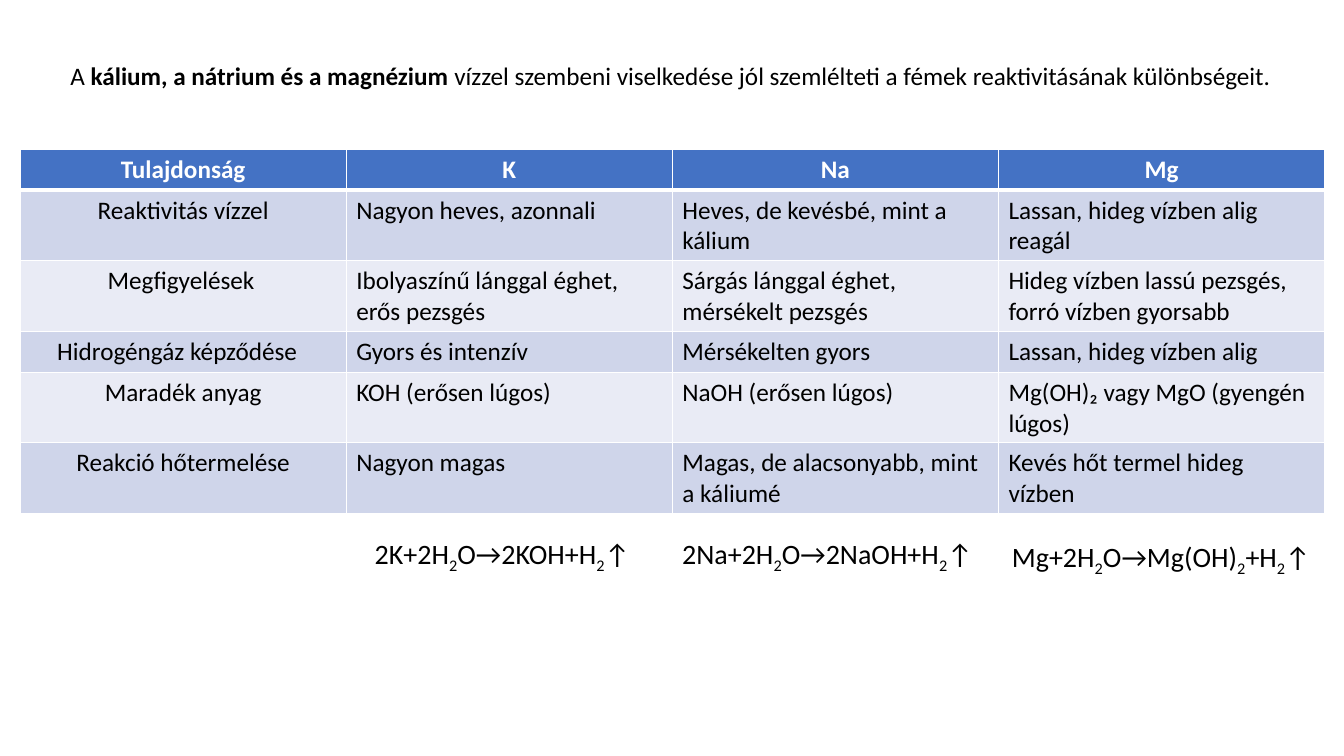
from pptx import Presentation
from pptx.dml.color import RGBColor
from pptx.enum import text
from pptx.oxml import parse_xml
from pptx.oxml.ns import nsdecls
from pptx.util import Pt

COLORS = {"ink": "000000", "white": "FFFFFF", "header": "4472C4",
          "band_dark": "CFD5EA", "band_light": "E9EBF5"}
FONT = "Calibri"

INTRO = [("A ", False), ("kálium, a nátrium és a magnézium ", True),
         ("vízzel szembeni viselkedése jól szemlélteti a fémek "
          "reaktivitásának különbségeit.", False)]

# A tab after a centred label shifts it to the left.
ROWS = [
    ["Tulajdonság", "K", "Na", "Mg"],
    ["Reaktivitás vízzel", "Nagyon heves, azonnali",
     "Heves, de kevésbé, mint a kálium", "Lassan, hideg vízben alig reagál"],
    ["Megfigyelések\t", "Ibolyaszínű lánggal éghet, erős pezsgés",
     "Sárgás lánggal éghet, mérsékelt pezsgés",
     "Hideg vízben lassú pezsgés, forró vízben gyorsabb"],
    ["Hidrogéngáz képződése\t", "Gyors és intenzív", "Mérsékelten gyors",
     "Lassan, hideg vízben alig"],
    ["Maradék anyag", "KOH (erősen lúgos)", "NaOH (erősen lúgos)",
     "Mg(OH)₂ vagy MgO (gyengén lúgos)"],
    ["Reakció hőtermelése", "Nagyon magas",
     "Magas, de alacsonyabb, mint a káliumé", "Kevés hőt termel hideg vízben"],
]
ONE_LINE, TWO_LINES = 29.2, 50.4
ROW_HEIGHTS = [ONE_LINE, TWO_LINES, TWO_LINES, ONE_LINE, TWO_LINES, TWO_LINES]

# Left, width, line spacing, formula; every second part is a subscript.
EQUATIONS = [
    (260.6, 210.2, 1, "2K+2H|2|O→2KOH+H|2|↑"),
    (480.2, 226.8, 1, "2Na+2H|2|O→2NaOH+H|2|↑"),
    (715.7, 236.9, 1.07, "Mg+2H|2|O→Mg(OH)|2|+H|2|↑"),
]


def add_run(p, words, size, color="ink", bold=False, subscript=False):
    r = p.add_run()
    r.text = words
    r.font.name, r.font.size, r.font.bold = FONT, Pt(size), bold
    r.font.color.rgb = RGBColor.from_string(COLORS[color])
    if subscript:
        r.font._element.set("baseline", "-25000")


def add_text_box(s, x, y, w, h):
    """Add a wrapping text box and return its first paragraph."""
    tf = s.shapes.add_textbox(Pt(x), Pt(y), Pt(w), Pt(h)).text_frame
    tf.word_wrap = True
    tf.auto_size = text.MSO_AUTO_SIZE.SHAPE_TO_FIT_TEXT
    return tf.paragraphs[0]


def add_intro(s, x, y, w, h):
    p = add_text_box(s, x, y, w, h)
    for words, bold in INTRO:
        add_run(p, words, 18, bold=bold)


def set_borders(cell, bottom):
    """Draw white 1 pt borders, with the bottom one of the given width."""
    tcPr = cell._tc.get_or_add_tcPr()
    for i, (side, width) in enumerate(zip("LRTB", (1, 1, 1, bottom))):
        tcPr.insert(i, parse_xml(
            f'<a:ln{side} {nsdecls("a")} w="{Pt(width)}"><a:solidFill>'
            f'<a:srgbClr val="{COLORS["white"]}"/></a:solidFill></a:ln{side}>'))


def add_property_table(s, x, y, w):
    n_cols = len(ROWS[0])
    table = s.shapes.add_table(len(ROWS), n_cols, Pt(x), Pt(y), Pt(w),
                               Pt(sum(ROW_HEIGHTS))).table
    for column in table.columns:
        column.width = Pt(w / n_cols)
    for i, (row, height) in enumerate(zip(ROWS, ROW_HEIGHTS)):
        table.rows[i].height = Pt(height)
        header = i == 0
        fill = "header" if header else "band_dark" if i % 2 else "band_light"
        for j, words in enumerate(row):
            cell = table.cell(i, j)
            cell.fill.solid()
            cell.fill.fore_color.rgb = RGBColor.from_string(COLORS[fill])
            # The header row is set off by a thick line on both sides of the edge.
            set_borders(cell, 3 if header else 1)
            p = cell.text_frame.paragraphs[0]
            if header or j == 0:
                p.alignment = text.PP_ALIGN.CENTER
            add_run(p, words, 18, "white" if header else "ink", header)


def add_equations(s, y, h):
    for x, w, spacing, formula in EQUATIONS:
        p = add_text_box(s, x, y, w, h)
        p.line_spacing = spacing
        for i, part in enumerate(formula.split("|")):
            add_run(p, part, 20, subscript=i % 2 == 1)


def main():
    prs = Presentation()
    prs.slide_width, prs.slide_height = Pt(960), Pt(540)
    s = prs.slides.add_slide(prs.slide_layouts[6])
    add_intro(s, 43.2, 39.6, 902.9, 28.8)
    add_property_table(s, 14.4, 106.6, 931.7)
    add_equations(s, 380, 31.7)
    prs.save("out.pptx")


if __name__ == "__main__":
    main()
